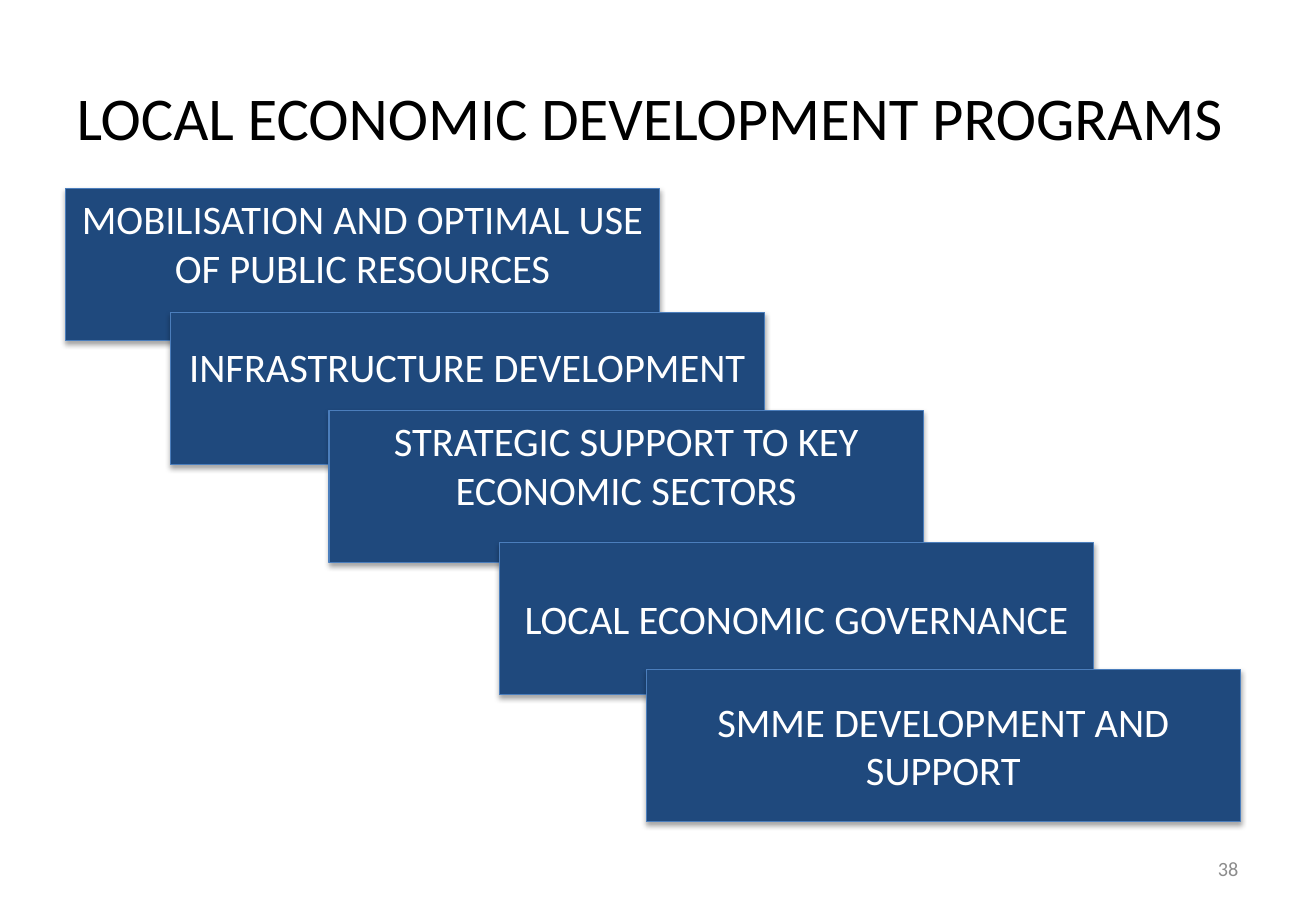
import lxml.etree
import pptx
import pptx.dml.color
import pptx.enum.shapes
import pptx.enum.text
import pptx.oxml.ns
import pptx.util

Cm = pptx.util.Cm
Pt = pptx.util.Pt
ALIGN = pptx.enum.text.PP_ALIGN

STEP_WIDTH, STEP_HEIGHT = 12.42, 3.18
RAISED = 0.91
PROGRAMS = [
    ("MOBILISATION AND OPTIMAL USE OF PUBLIC RESOURCES", 1.37, 3.94, RAISED),
    ("INFRASTRUCTURE DEVELOPMENT", 3.56, 6.53, RAISED),
    ("STRATEGIC SUPPORT TO KEY ECONOMIC SECTORS", 6.88, 8.59, RAISED),
    ("LOCAL ECONOMIC GOVERNANCE", 10.44, 11.35, 0),
    ("SMME DEVELOPMENT AND SUPPORT", 13.51, 14.0, 0),
]


def color(hex_code):
    """Return the colour for a hex string."""
    return pptx.dml.color.RGBColor.from_string(hex_code)


def write(holder, text, size, hex_code, align):
    """Put one middle-anchored, wrapped paragraph of text into a shape."""
    frame = holder.text_frame
    frame.word_wrap = True
    frame.vertical_anchor = pptx.enum.text.MSO_ANCHOR.MIDDLE
    frame.text = text
    paragraph = frame.paragraphs[0]
    paragraph.alignment = align
    paragraph.font.name = "Calibri"
    paragraph.font.size = Pt(size)
    paragraph.font.color.rgb = color(hex_code)


def add_soft_shadow(shape):
    """Give a shape a soft shadow that falls straight down."""
    qn = pptx.oxml.ns.qn
    shape.shadow.inherit = False
    effects = shape.element.spPr.find(qn("a:effectLst"))
    shadow = lxml.etree.SubElement(
        effects, qn("a:outerShdw"), blurRad=str(Pt(3.1)), dist=str(Pt(1.8)),
        dir="5400000", rotWithShape="0")
    tint = lxml.etree.SubElement(shadow, qn("a:srgbClr"), val="000000")
    lxml.etree.SubElement(tint, qn("a:alpha"), val="35000")


def place_title(slide, left, top, width, height):
    """Move the title placeholder into the given box and fill it."""
    title = slide.shapes.title
    title.left, title.top = Cm(left), Cm(top)
    title.width, title.height = Cm(width), Cm(height)
    write(title, "LOCAL ECONOMIC DEVELOPMENT PROGRAMS", 36, "000000", ALIGN.CENTER)


def add_program(slide, text, left, top, bottom_inset):
    """Add one step of the staircase of programs."""
    step = slide.shapes.add_shape(
        pptx.enum.shapes.MSO_SHAPE.RECTANGLE,
        Cm(left), Cm(top), Cm(STEP_WIDTH), Cm(STEP_HEIGHT))
    step.fill.solid()
    step.fill.fore_color.rgb = color("1F497D")
    step.line.color.rgb = color("4B7EBC")
    step.line.width = Pt(0.75)
    add_soft_shadow(step)
    write(step, text, 24, "FFFFFF", ALIGN.CENTER)
    frame = step.text_frame
    frame.margin_left = frame.margin_right = Cm(0.13)
    frame.margin_top, frame.margin_bottom = 0, Cm(bottom_inset)


def add_page_number(slide, left, top, width, height):
    """Add the page number in the given box."""
    number = slide.shapes.add_textbox(Cm(left), Cm(top), Cm(width), Cm(height))
    write(number, "38", 12, "8C8C8C", ALIGN.RIGHT)


def main():
    """Build the slide and save it."""
    deck = pptx.Presentation()
    deck.slide_width, deck.slide_height = Cm(27.51), Cm(19.05)
    slide = deck.slides.add_slide(deck.slide_layouts[5])
    place_title(slide, 1.2, 0.85, 24.77, 3.18)
    add_page_number(slide, 19.71, 17.65, 6.43, 1.02)
    for program in PROGRAMS:
        add_program(slide, *program)
    deck.save("out.pptx")


if __name__ == "__main__":
    main()
